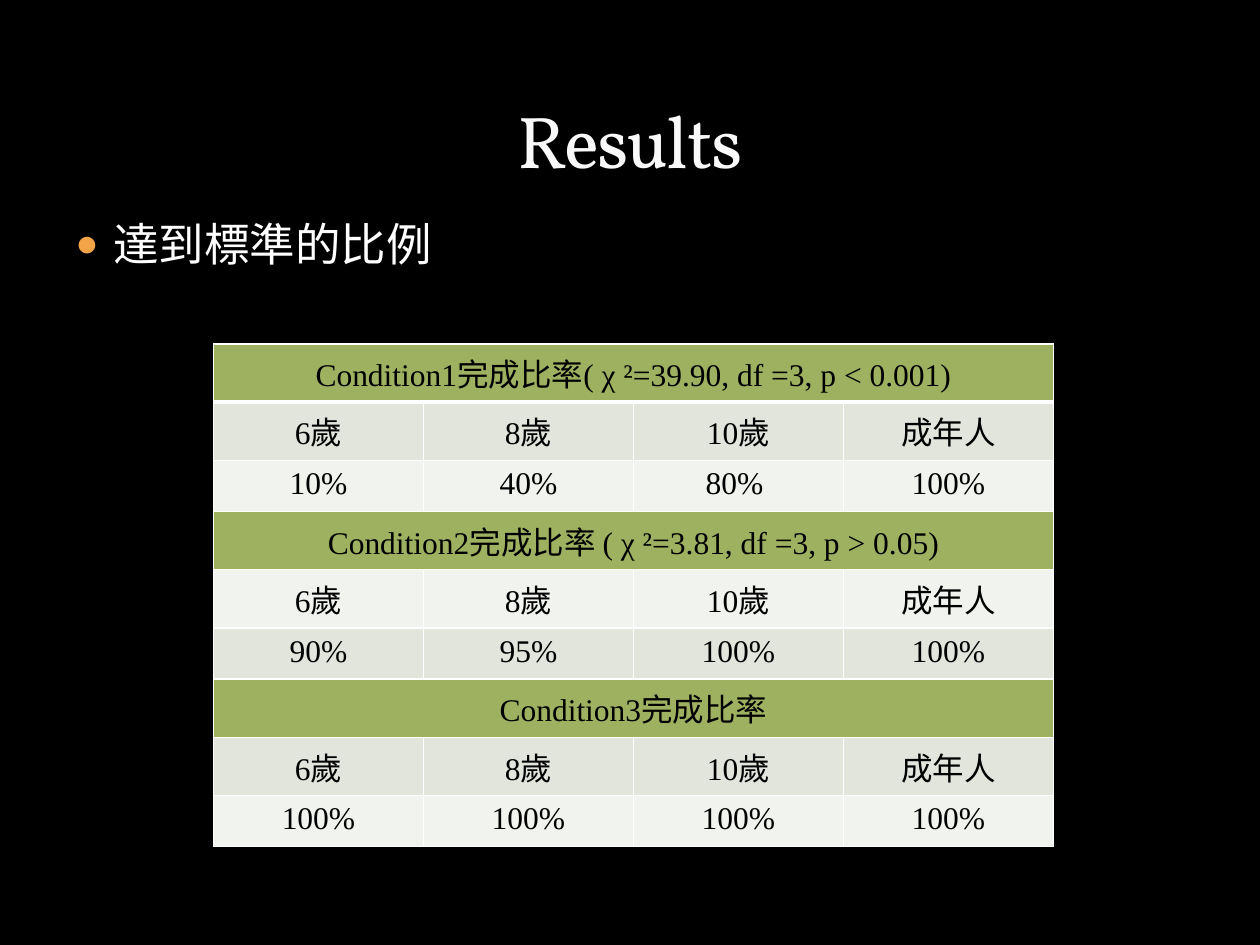
from lxml import etree
from pptx import Presentation
from pptx.dml.color import RGBColor
from pptx.enum.text import MSO_ANCHOR, PP_ALIGN
from pptx.oxml.ns import qn
from pptx.util import Pt

CENTER, LEFT = PP_ALIGN.CENTER, PP_ALIGN.LEFT
TOP, BOTTOM = MSO_ANCHOR.TOP, MSO_ANCHOR.BOTTOM
SERIF, DISPLAY = "Times New Roman", "Vollkorn"
BLACK = RGBColor(0x00, 0x00, 0x00)
WHITE = RGBColor(0xFF, 0xFF, 0xFF)
OFF_WHITE = RGBColor(0xF9, 0xF9, 0xF9)
ORANGE = RGBColor(0xF3, 0xA4, 0x47)
OLIVE = RGBColor(0x3C, 0x44, 0x22)
GREEN = RGBColor(0x9E, 0xB1, 0x60)
GRAY = RGBColor(0xE1, 0xE5, 0xDC)
PALE = RGBColor(0xF0, 0xF3, 0xEE)

AGES = ["6歲", "8歲", "10歲", "成年人"]
CONDITIONS = [
    ("Condition1完成比率( χ ²=39.90, df =3, p < 0.001)",
     ["10%", "40%", "80% ", "100%"], (GRAY, PALE)),
    ("Condition2完成比率 ( χ ²=3.81, df =3, p > 0.05)",
     ["90%", "95%", "100%", "100%"], (PALE, GRAY)),
    ("Condition3完成比率", ["100%"] * 4, (GRAY, PALE)),
]


def add_node(parent, tag, **attrs):
    node = etree.SubElement(parent, qn(tag))
    for name, value in attrs.items():
        node.set(name, str(value))
    return node


def add_line(parent, tag, color, width):
    ln = add_node(parent, tag, w=Pt(width))
    return add_node(add_node(ln, "a:solidFill"), "a:srgbClr", val=color)


def write(tf, text, *, size, color, font=SERIF, align=LEFT):
    p = tf.paragraphs[0]
    p.alignment = align
    r = p.add_run()
    r.text = text
    r.font.size = Pt(size)
    r.font.name = font
    r.font.color.rgb = color
    return p, r


class Deck:
    """Holds the slide style and the current slide."""

    def __init__(self):
        self.prs = Presentation()
        self.prs.slide_width, self.prs.slide_height = Pt(720), Pt(540)
        self.s = self.prs.slides.add_slide(self.prs.slide_layouts[6])
        self.s.background.fill.solid()
        self.s.background.fill.fore_color.rgb = BLACK

    def text(self, text, x, y, w, h, anchor=TOP, **fmt):
        sp = self.s.shapes.add_textbox(Pt(x), Pt(y), Pt(w), Pt(h))
        tf = sp.text_frame
        tf.word_wrap = True
        tf.vertical_anchor = anchor
        return write(tf, text, **fmt)

    def title(self, text):
        r = self.text(text, 36, 12, 648, 96, BOTTOM, size=42,
                      color=OFF_WHITE, font=DISPLAY, align=CENTER)[1]
        rPr = r.font._element
        rPr.set("spc", "-100")
        add_node(add_line(rPr, "a:ln", OLIVE, 0.25), "a:alpha", val=25000)
        rPr.insert(0, rPr[-1])

    def bullet(self, text):
        p = self.text(text, 36, 120, 648, 360, size=26, color=WHITE)[0]
        pPr = p._p.get_or_add_pPr()
        pPr.set("marL", str(Pt(21.6)))
        pPr.set("indent", str(-Pt(21.6)))
        add_node(add_node(pPr, "a:buClr"), "a:srgbClr", val=ORANGE)
        add_node(pPr, "a:buSzPct", val=85000)
        add_node(pPr, "a:buFont", typeface=SERIF)
        add_node(pPr, "a:buChar", char="●")

    def cell(self, cell, text, fill, top=1, bottom=1):
        tcPr = cell._tc.get_or_add_tcPr()
        for side, width in zip("LRTB", (1, 1, top, bottom)):
            add_line(tcPr, f"a:ln{side}", WHITE, width)
        cell.fill.solid()
        cell.fill.fore_color.rgb = fill
        if text:
            write(cell.text_frame, text, size=18, color=BLACK, align=CENTER)

    def table(self, x, y, col_w, label_h, rate_h):
        cols = len(AGES)
        blank = [""] * (cols - 1)
        lines = []
        for heading, rates, (age_fill, rate_fill) in CONDITIONS:
            lines += [([heading] + blank, GREEN, label_h),
                      (AGES, age_fill, label_h), (rates, rate_fill, rate_h)]
        height = sum(h for _, _, h in lines)
        table = self.s.shapes.add_table(len(lines), cols, Pt(x), Pt(y),
                                        Pt(col_w * cols), Pt(height)).table
        table.first_row = table.horz_banding = False
        for i, (texts, fill, row_h) in enumerate(lines):
            table.rows[i].height = Pt(row_h)
            for j, text in enumerate(texts):
                self.cell(table.cell(i, j), text, fill,
                          top=3 if i == 1 else 1, bottom=3 if i == 0 else 1)
            if i % 3 == 0:
                table.cell(i, 0).merge(table.cell(i, cols - 1))


def main():
    deck = Deck()
    deck.bullet("達到標準的比例")
    deck.title("Results")
    deck.table(122, 196.5, 120, 33.3, 29.2)
    deck.prs.save("out.pptx")


if __name__ == "__main__":
    main()
